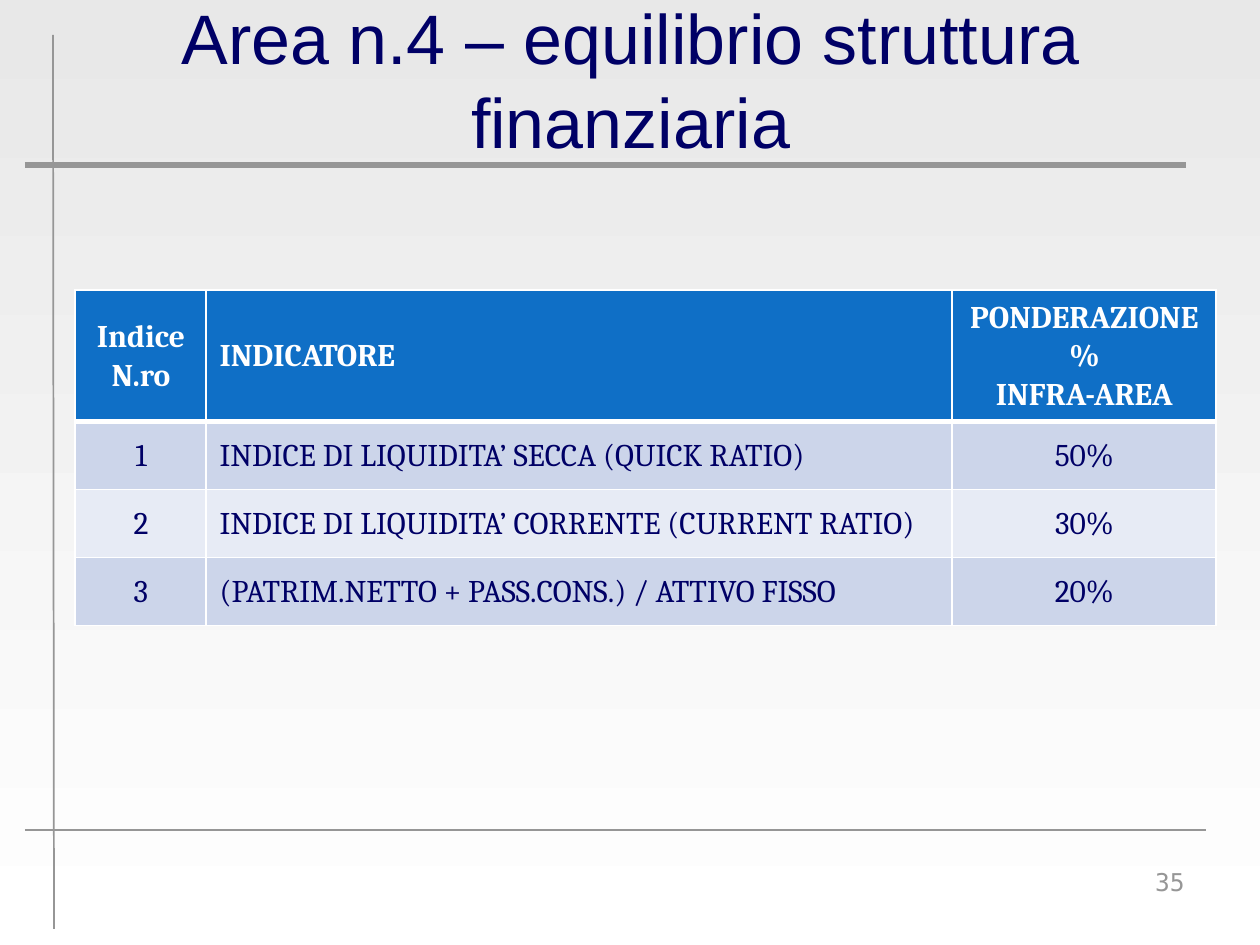
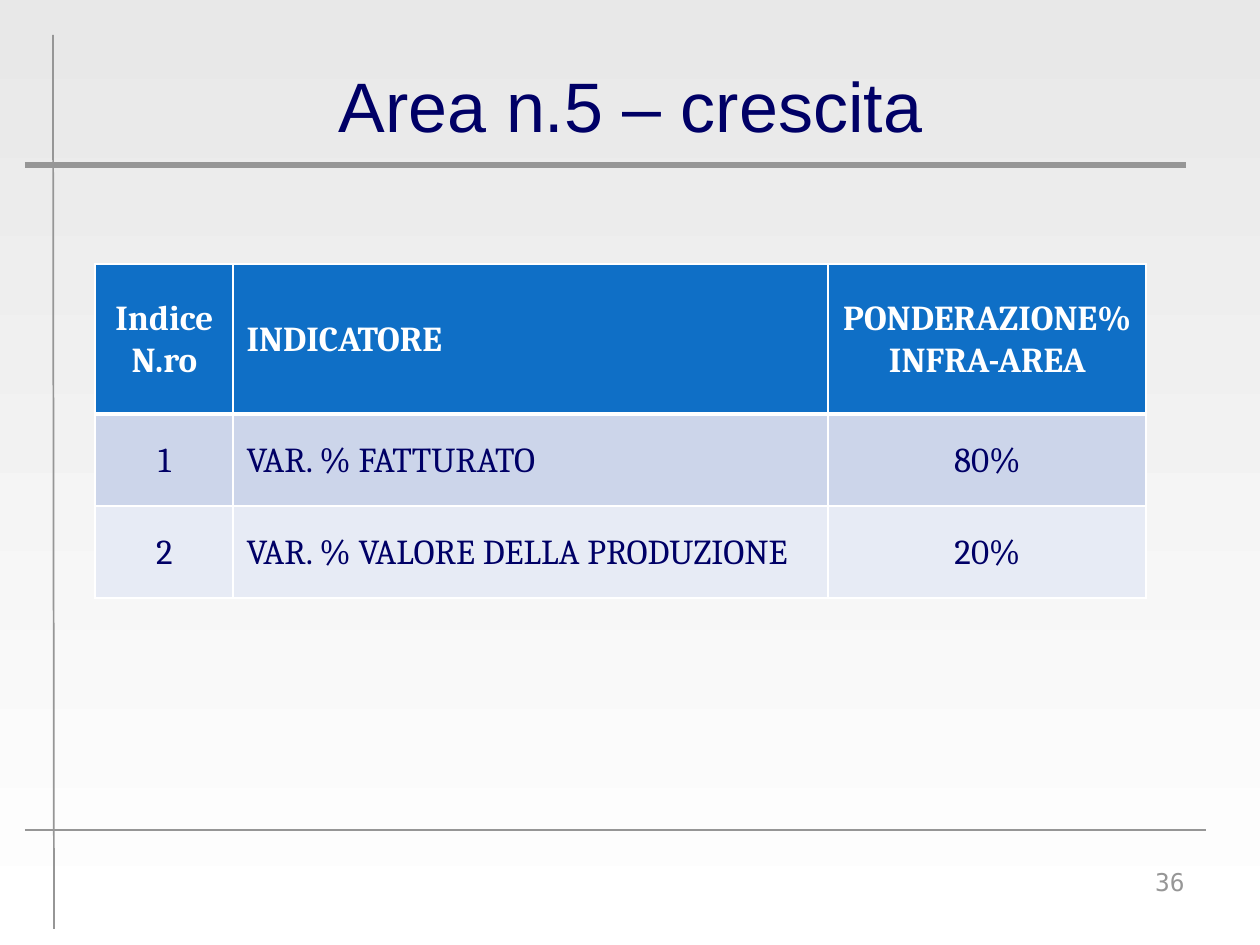
import pptx
import pptx.dml.color
import pptx.enum.shapes
import pptx.enum.text
import pptx.oxml.ns
import pptx.util
from lxml import etree

RGBColor = pptx.dml.color.RGBColor
ALIGN = pptx.enum.text.PP_ALIGN
ANCHOR = pptx.enum.text.MSO_ANCHOR
qn = pptx.oxml.ns.qn

NAVY = RGBColor(0x00, 0x00, 0x66)
GREY = RGBColor(0x96, 0x96, 0x96)
WHITE = RGBColor(0xFF, 0xFF, 0xFF)
MIST = RGBColor(0xE8, 0xE8, 0xE8)
HEADER_BLUE = RGBColor(0x0F, 0x6F, 0xC6)
BANDS = (RGBColor(0xCC, 0xD5, 0xEA), RGBColor(0xE7, 0xEB, 0xF5))

PX = 914400 // 126
PAGE_SIZE = (1260, 945)
# Start x, start y, end x, end y, width in points
RULES = [(25, 165, 1186, 165, 3), (25, 830, 1206, 830, 1), (54, 929, 53, 35, 1)]
COLUMN_ALIGN = (ALIGN.CENTER, ALIGN.JUSTIFY, ALIGN.CENTER)


def px(*lengths):
    return [length * PX for length in lengths]


def set_background(master):
    fill = master.background.fill
    fill.gradient()
    fill.gradient_angle = 270
    for stop, color, position in zip(fill.gradient_stops, (MIST, WHITE), (0, 1)):
        stop.color.rgb = color
        stop.position = position


def add_rules(page):
    for *ends, width in RULES:
        rule = page.shapes.add_connector(
            pptx.enum.shapes.MSO_CONNECTOR.STRAIGHT, *px(*ends))
        rule.line.color.rgb = GREY
        rule.line.width = pptx.util.Pt(width)
        etree.SubElement(rule._element.spPr, qn("a:effectLst"))


def add_text(page, box, text, font, size, color, align, anchor):
    frame = page.shapes.add_textbox(*px(*box)).text_frame
    frame.word_wrap = True
    frame.vertical_anchor = anchor
    frame.text = text
    style_paragraph(frame.paragraphs[0], font, size, color, align)


def style_paragraph(para, font, size, color, align, bold=False):
    para.alignment = align
    para.font.name = font
    para.font.size = pptx.util.Pt(size)
    para.font.color.rgb = color
    para.font.bold = bold


def set_borders(cell, top, bottom):
    properties = cell._tc.get_or_add_tcPr()
    for side, width in (("L", 1), ("R", 1), ("T", top), ("B", bottom)):
        line = etree.SubElement(properties, qn(f"a:ln{side}"), w=str(pptx.util.Pt(width)))
        fill = etree.SubElement(line, qn("a:solidFill"))
        etree.SubElement(fill, qn("a:srgbClr"), val=str(WHITE))


def add_index_table(page, corner, widths, heights, rows, size):
    frame = page.shapes.add_table(
        len(rows), len(widths), *px(*corner, sum(widths), sum(heights)))
    table = frame.table
    for column, width in zip(table.columns, widths):
        column.width = width * PX
    for row, height in zip(table.rows, heights):
        row.height = height * PX

    for row_number, texts in enumerate(rows):
        header = row_number == 0
        for column_number, text in enumerate(texts):
            cell = table.cell(row_number, column_number)
            # A thick line parts the header from the body
            set_borders(cell, top=3 if row_number == 1 else 1, bottom=3 if header else 1)
            cell.fill.solid()
            cell.fill.fore_color.rgb = HEADER_BLUE if header else BANDS[(row_number - 1) % 2]
            cell.vertical_anchor = ANCHOR.MIDDLE
            cell.text_frame.text = text
            for para in cell.text_frame.paragraphs:
                para._p.get_or_add_pPr().set("marL", str(PX))
                para.line_spacing = 1.05
                style_paragraph(para, "Cambria", size, WHITE if header else NAVY,
                                COLUMN_ALIGN[column_number], header)


def add_area_page(deck, number, title, title_top, **table):
    page = deck.slides.add_slide(deck.slide_layouts[6])
    add_rules(page)
    add_text(page, (95, title_top, 1071, 134), title,
             "Arial", 40, NAVY, ALIGN.CENTER, ANCHOR.MIDDLE)
    add_index_table(page, **table)
    # Page number
    add_text(page, (903, 861, 294, 66), str(number),
             "DejaVu Sans Mono", 14, GREY, ALIGN.RIGHT, ANCHOR.TOP)


def main():
    deck = pptx.Presentation()
    deck.slide_width, deck.slide_height = px(*PAGE_SIZE)
    set_background(deck.slide_master)

    add_area_page(
        deck, 35, "Area n.4 – equilibrio struttura finanziaria", 11,
        corner=(75, 290), widths=(131, 746, 264), heights=(113, 68, 68, 68), size=18,
        rows=[
            ("Indice N.ro", "INDICATORE", "PONDERAZIONE %\nINFRA-AREA"),
            ("1", "INDICE DI LIQUIDITA’ SECCA (QUICK RATIO)", "50%"),
            ("2", "INDICE DI LIQUIDITA’ CORRENTE (CURRENT RATIO)", "30%"),
            ("3", "(PATRIM.NETTO + PASS.CONS.) / ATTIVO FISSO", "20%"),
        ])
    add_area_page(
        deck, 36, "Area n.5 – crescita", 37,
        corner=(95, 264), widths=(138, 595, 318), heights=(150, 92, 92), size=20,
        rows=[
            ("Indice N.ro", "INDICATORE", "PONDERAZIONE%\vINFRA-AREA"),
            ("1", "VAR. % FATTURATO", "80%"),
            ("2", "VAR. % VALORE DELLA PRODUZIONE", "20%"),
        ])
    deck.save("out.pptx")


if __name__ == "__main__":
    main()
